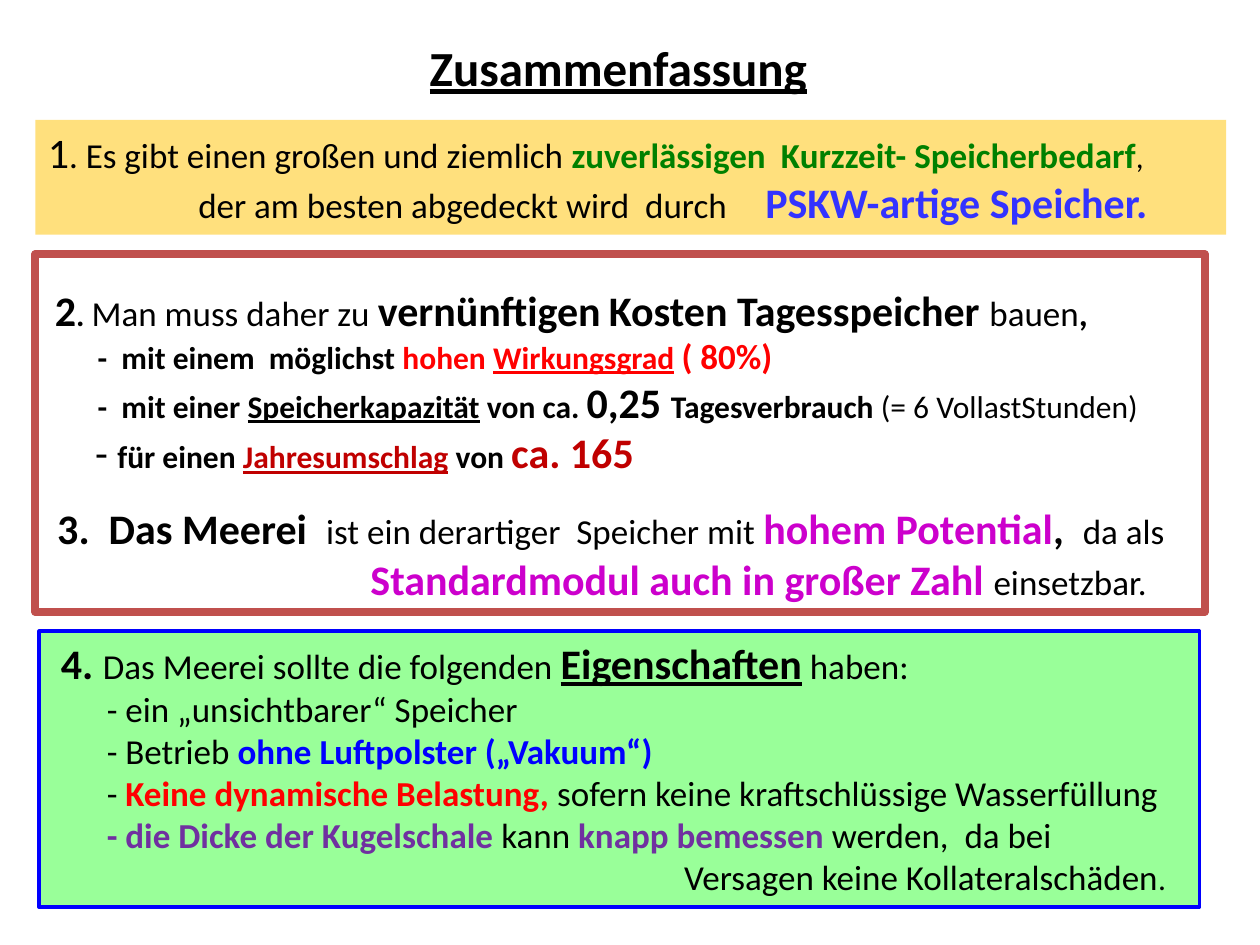
import pptx
import pptx.dml.color
import pptx.enum.shapes
import pptx.enum.text
import pptx.oxml
import pptx.oxml.ns
import pptx.util

Pt = pptx.util.Pt
RGBColor = pptx.dml.color.RGBColor

BLACK = RGBColor(0x00, 0x00, 0x00)
GREEN = RGBColor(0x00, 0x80, 0x00)
SOFT_BLUE = RGBColor(0x33, 0x33, 0xFF)
BLUE = RGBColor(0x00, 0x00, 0xFF)
RED = RGBColor(0xFF, 0x00, 0x00)
DARK_RED = RGBColor(0xC0, 0x00, 0x00)
MAGENTA = RGBColor(0xCC, 0x00, 0xCC)
PURPLE = RGBColor(0x70, 0x30, 0xA0)
SAND = RGBColor(0xFF, 0xE0, 0x7D)
BRICK = RGBColor(0xC0, 0x50, 0x4D)
MINT = RGBColor(0x99, 0xFF, 0x99)


def add_run(paragraph, text, size=20, bold=False, color=BLACK, underline=False):
    run = paragraph.add_run()
    run.text = text
    font_format = {"name": "Calibri", "size": Pt(size), "bold": bold, "underline": underline}
    for attribute, value in font_format.items():
        setattr(run.font, attribute, value)
    run.font.color.rgb = color


def format_frame(text_frame, margin_top, wrap):
    frame_format = {
        "word_wrap": wrap,
        "auto_size": pptx.enum.text.MSO_AUTO_SIZE.NONE,
        "vertical_anchor": pptx.enum.text.MSO_ANCHOR.TOP,
        "margin_left": Pt(7.2),
        "margin_right": Pt(7.2),
        "margin_top": Pt(margin_top),
        "margin_bottom": Pt(3.6),
    }
    for attribute, value in frame_format.items():
        setattr(text_frame, attribute, value)


presentation = pptx.Presentation()
presentation.slide_width = Pt(720)
presentation.slide_height = Pt(540)
slide = presentation.slides.add_slide(presentation.slide_layouts[5])

title = slide.shapes.title
title_place = {"left": 238.3, "top": 18, "width": 244.1, "height": 41}
for attribute, value in title_place.items():
    setattr(title, attribute, Pt(value))
format_frame(title.text_frame, 3.6, False)
title_paragraph = title.text_frame.paragraphs[0]
title_paragraph.alignment = pptx.enum.text.PP_ALIGN.LEFT
add_run(title_paragraph, "Zusammenfassung", 28, True, BLACK, True)

demand_lines = [
    {"runs": [
        ("1", 24), (". Es gibt einen großen und ziemlich ",),
        ("zuverlässigen ", 20, True, GREEN), (" ", 18),
        ("Kurzzeit- Speicherbedarf", 20, True, GREEN), (",", 18)]},
    {"indent": 86, "tab": 401.7, "runs": [
        ("der am besten abgedeckt wird  durch\t",),
        ("PSKW-artige Speicher.", 24, True, SOFT_BLUE)]},
]
storage_lines = [
    {"indent": 4, "runs": [
        ("2", 24, True), (". ", 18, True), ("Man muss daher zu ",),
        ("vernünftigen", 24, True), (" ",), ("Kosten Tagesspeicher ", 24, True),
        ("bauen",), (",", 20, True)]},
    {"indent": 28.5, "runs": [
        ("-  mit einem  möglichst ", 18, True), ("hohen ", 18, True, RED),
        ("Wirkungsgrad", 18, True, RED, True), (" ", 18, True, RED),
        ("( 80%)", 20, True, RED)]},
    {"indent": 28.5, "runs": [
        ("-  mit einer ", 18, True), ("Speicherkapazität", 18, True, BLACK, True),
        (" von ca. ", 18, True), ("0,25 ", 24, True), ("Tagesverbrauch ", 18, True),
        ("(= 6 VollastStunden)", 18)]},
    {"indent": 27, "runs": [
        ("- ", 24), ("für einen ", 18, True),
        ("Jahresumschlag", 18, True, DARK_RED, True), (" von ", 18, True),
        ("ca. 165", 24, True, DARK_RED)]},
    {"indent": 5.4, "space": 14.6, "runs": [
        ("3.  Das Meerei  ", 24, True), ("ist ein derartiger  Speicher mit ",),
        ("hohem Potential", 24, True, MAGENTA), (",  ", 24, True), ("da als",)]},
    {"indent": 184.4, "runs": [
        ("Standardmodul auch in großer Zahl ", 24, True, MAGENTA), ("einsetzbar.",)]},
]
property_lines = [
    {"indent": 5.4, "runs": [
        ("4. ", 24, True), ("Das Meerei sollte die folgenden ",),
        ("Eigenschaften", 24, True, BLACK, True), (" haben:",)]},
    {"indent": 31.6, "runs": [("- ein „unsichtbarer“ Speicher",)]},
    {"indent": 31.6, "runs": [
        ("- Betrieb ",), ("ohne Luftpolster („Vakuum“)", 20, True, BLUE)]},
    {"indent": 31.6, "runs": [
        ("- ",), ("Keine dynamische Belastung, ", 20, True, RED),
        ("sofern keine kraftschlüssige Wasserfüllung",)]},
    {"indent": 31.6, "runs": [
        ("- die Dicke der Kugelschale ", 20, True, PURPLE), ("kann ",),
        ("knapp bemessen ", 20, True, PURPLE), ("werden,  da bei",)]},
    {"indent": 361.6, "runs": [("Versagen keine Kollateralschäden",), (".", 18)]},
]

boxes = [
    {"place": (20.2, 68.6, 680.4, 65.6), "fill": SAND, "line": None,
     "margin_top": 3.6, "lines": demand_lines},
    {"place": (20.2, 145.3, 668.2, 204.5), "fill": None, "line": (BRICK, 4.5),
     "margin_top": 17, "lines": storage_lines},
    {"place": (22.3, 360.7, 663.1, 157.7), "fill": MINT, "line": (BLUE, 2),
     "margin_top": 3.6, "lines": property_lines},
]

for box in boxes:
    shape = slide.shapes.add_shape(
        pptx.enum.shapes.MSO_SHAPE.RECTANGLE, *[Pt(length) for length in box["place"]])
    shape.shadow.inherit = False
    if box["fill"] is None:
        shape.fill.background()
    else:
        shape.fill.solid()
        shape.fill.fore_color.rgb = box["fill"]
    if box["line"] is None:
        shape.line.fill.background()
    else:
        line_color, line_width = box["line"]
        shape.line.color.rgb = line_color
        shape.line.width = Pt(line_width)
    text_frame = shape.text_frame
    format_frame(text_frame, box["margin_top"], True)
    for index, line in enumerate(box["lines"]):
        paragraph = text_frame.add_paragraph() if index else text_frame.paragraphs[0]
        paragraph.alignment = pptx.enum.text.PP_ALIGN.LEFT
        paragraph.space_before = Pt(line.get("space", 0))
        properties = paragraph._p.get_or_add_pPr()
        properties.set("marL", str(Pt(line.get("indent", 0))))
        properties.set("indent", "0")
        if "tab" in line:
            tab_list = pptx.oxml.parse_xml(
                f'<a:tabLst {pptx.oxml.ns.nsdecls("a")}>'
                f'<a:tab pos="{Pt(line["tab"])}" algn="l"/></a:tabLst>')
            properties.append(tab_list)
        for run in line["runs"]:
            add_run(paragraph, *run)

presentation.save("out.pptx")
